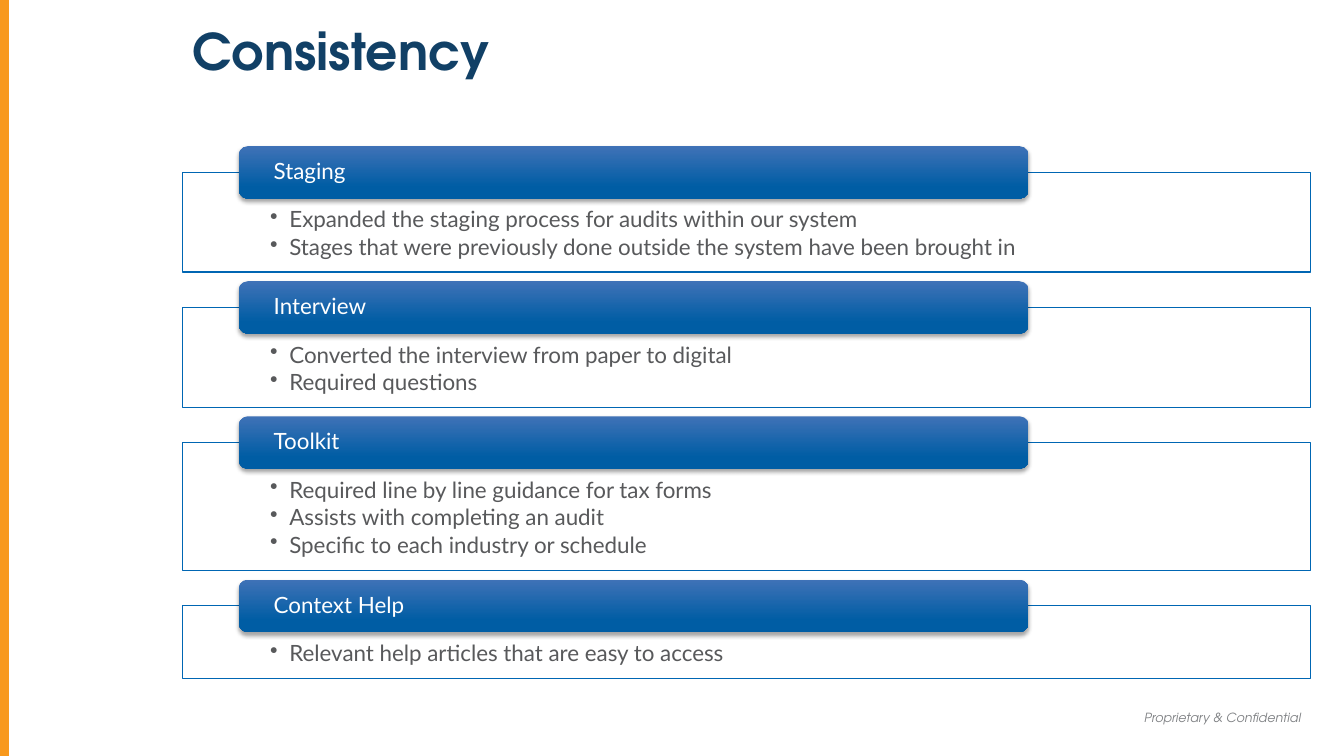
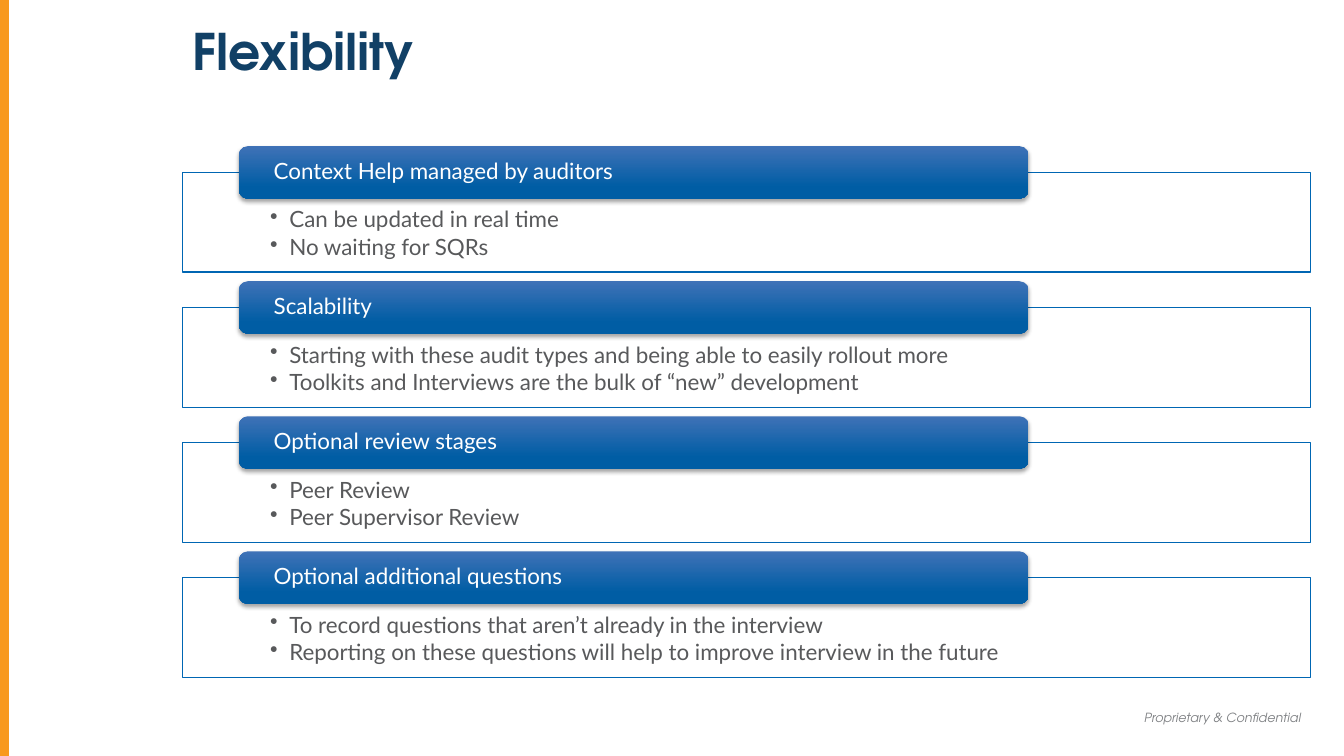
from lxml import etree
from pptx import Presentation
from pptx.dml.color import RGBColor
from pptx.enum.shapes import MSO_CONNECTOR as Connector, MSO_SHAPE as Shape
from pptx.enum.text import MSO_ANCHOR as Anchor, MSO_AUTO_SIZE as AutoSize, PP_ALIGN as Align
from pptx.oxml import parse_xml
from pptx.oxml.ns import nsdecls, qn
from pptx.util import Emu, Pt

PX = 9144
SLIDE_WIDTH, SLIDE_HEIGHT = 1333, 750
LEFT, WIDTH = 181, 1119

WHITE = RGBColor(0xFF, 0xFF, 0xFF)
NAVY = RGBColor(0x11, 0x40, 0x66)
ORANGE = RGBColor(0xF8, 0x99, 0x1D)
FRAME_BLUE = RGBColor(0x00, 0x66, 0xB3)
LIGHT_BLUE = RGBColor(0x3F, 0x72, 0xB7)
DEEP_BLUE = RGBColor(0x00, 0x5D, 0xA4)
TEXT_GRAY = RGBColor(0x58, 0x59, 0x5B)
FOOTER_GRAY = RGBColor(0x80, 0x82, 0x85)

DISPLAY, BODY = "TeX Gyre Adventor", "Lato"
TITLE_FONT = {"name": DISPLAY, "size": Pt(36), "bold": True, "color": NAVY}
FOOTER_FONT = {"name": DISPLAY, "size": Pt(9), "italic": True, "color": FOOTER_GRAY}
HEADING_FONT = {"name": BODY, "size": Pt(16), "color": WHITE}
BULLET_FONT = {"name": BODY, "size": Pt(16), "color": TEXT_GRAY}

FIRST_FRAME_TOP, FRAME_GAP = 171, 35
ONE_LINE_HEIGHT, TWO_LINES_STEP = 72, 55
HEADING_INDENT, HEADING_RISE = 56, 26
HEADING_WIDTH, HEADING_HEIGHT = 783, 52
BULLET_INDENT = 19

SLIDES = [
    ("Consistency", [
        ("Staging", [
            "Expanded the staging process for audits within our system",
            "Stages that were previously done outside the system have been brought in",
        ]),
        ("Interview", [
            "Converted the interview from paper to digital",
            "Required questions",
        ]),
        ("Toolkit", [
            "Required line by line guidance for tax forms",
            "Assists with completing an audit",
            "Specific to each industry or schedule",
        ]),
        ("Context Help", ["Relevant help articles that are easy to access"]),
    ]),
    ("Flexibility", [
        ("Context Help managed by auditors", [
            "Can be updated in real time",
            "No waiting for SQRs",
        ]),
        ("Scalability", [
            "Starting with these audit types and being able to easily rollout more",
            "Toolkits and Interviews are the bulk of “new” development",
        ]),
        ("Optional review stages", ["Peer Review", "Peer Supervisor Review"]),
        ("Optional additional questions", [
            "To record questions that aren’t already in the interview",
            "Reporting on these questions will help to improve interview in the future",
        ]),
    ]),
]


def px(*lengths):
    return [Emu(length * PX) for length in lengths]


def set_frame(shape, anchor, insets):
    frame = shape.text_frame
    frame.word_wrap = True
    frame.auto_size = AutoSize.NONE
    frame.vertical_anchor = anchor
    for side, inset in zip(("left", "top", "right", "bottom"), px(*insets)):
        setattr(frame, f"margin_{side}", inset)
    return frame


def write(paragraph, text, font_format, **paragraph_format):
    for name, value in paragraph_format.items():
        setattr(paragraph, name, value)
    run = paragraph.add_run()
    run.text = text
    for name, value in font_format.items():
        if name == "color":
            run.font.color.rgb = value
        else:
            setattr(run.font, name, value)


def add_bullet(paragraph):
    properties = paragraph._p.get_or_add_pPr()
    properties.set("marL", str(BULLET_INDENT * PX))
    properties.set("indent", str(-BULLET_INDENT * PX))
    etree.SubElement(properties, qn("a:buChar"), char="•")


def add_frame(slide, left, top, width, height, bullets):
    shape = slide.shapes.add_shape(Shape.RECTANGLE, *px(left, top, width, height))
    shape.shadow.inherit = False
    shape.fill.solid()
    shape.fill.fore_color.rgb = WHITE
    color = shape._element.spPr.find(qn("a:solidFill"))[0]
    etree.SubElement(color, qn("a:alpha"), val="90000")
    shape.line.color.rgb = FRAME_BLUE
    shape.line.width = Pt(1)
    frame = set_frame(shape, Anchor.TOP, (87, 36, 87, 12))
    for index, bullet in enumerate(bullets):
        paragraph = frame.add_paragraph() if index else frame.paragraphs[0]
        add_bullet(paragraph)
        write(paragraph, bullet, BULLET_FONT, alignment=Align.LEFT,
              line_spacing=0.9, space_after=Pt(2.4))


def add_heading(slide, left, top, text):
    shape = slide.shapes.add_shape(
        Shape.ROUNDED_RECTANGLE, *px(left, top, HEADING_WIDTH, HEADING_HEIGHT))
    shape.fill.gradient()
    shape.fill.gradient_angle = 270
    stops = zip(shape.fill.gradient_stops, (LIGHT_BLUE, DEEP_BLUE), (0, 0.78))
    for stop, color, position in stops:
        stop.color.rgb = color
        stop.position = position
    shape.line.fill.background()
    shape.shadow.inherit = False
    shape._element.spPr.find(qn("a:effectLst")).append(parse_xml(
        f'<a:outerShdw {nsdecls("a")} blurRad="{Pt(3)}" dist="{Pt(2)}" dir="5400000" '
        'algn="t" rotWithShape="0"><a:srgbClr val="000000"><a:alpha val="35000"/>'
        '</a:srgbClr></a:outerShdw>'))
    frame = set_frame(shape, Anchor.MIDDLE, (32, 0, 32, 0))
    write(frame.paragraphs[0], text, HEADING_FONT, alignment=Align.LEFT, line_spacing=0.9)


def add_sections(slide, left, top, width, sections):
    for heading, bullets in sections:
        height = ONE_LINE_HEIGHT + (len(bullets) - 1) * TWO_LINES_STEP // 2
        add_frame(slide, left, top, width, height, bullets)
        add_heading(slide, left + HEADING_INDENT, top - HEADING_RISE, heading)
        top += height + FRAME_GAP


def add_band(slide, left):
    band = slide.shapes.add_connector(
        Connector.STRAIGHT, *px(left, 0, left, SLIDE_HEIGHT))
    band.line.color.rgb = ORANGE
    band.line.width = Pt(8)
    etree.SubElement(band._element.spPr, qn("a:effectLst"))


def add_footer(slide, left, top, width, height):
    footer = slide.shapes.add_textbox(*px(left, top, width, height))
    frame = set_frame(footer, Anchor.BOTTOM, (10, 5, 10, 5))
    write(frame.paragraphs[0], "Proprietary & Confidential", FOOTER_FONT,
          alignment=Align.RIGHT)


def set_title(slide, left, top, width, height, text):
    title = slide.shapes.title
    box = zip(("left", "top", "width", "height"), px(left, top, width, height))
    for name, value in box:
        setattr(title, name, value)
    frame = set_frame(title, Anchor.TOP, (10, 5, 10, 5))
    write(frame.paragraphs[0], text, TITLE_FONT, alignment=Align.LEFT)


def add_section_slide(presentation, title, sections):
    slide = presentation.slides.add_slide(presentation.slide_layouts[5])
    add_footer(slide, 1097, 691, 203, 33)
    add_band(slide, 3)
    set_title(slide, LEFT, 15, WIDTH, 100, title)
    add_sections(slide, LEFT, FIRST_FRAME_TOP, WIDTH, sections)


def main():
    presentation = Presentation()
    presentation.slide_width, presentation.slide_height = px(SLIDE_WIDTH, SLIDE_HEIGHT)
    for title, sections in SLIDES:
        add_section_slide(presentation, title, sections)
    presentation.save("out.pptx")


if __name__ == "__main__":
    main()
